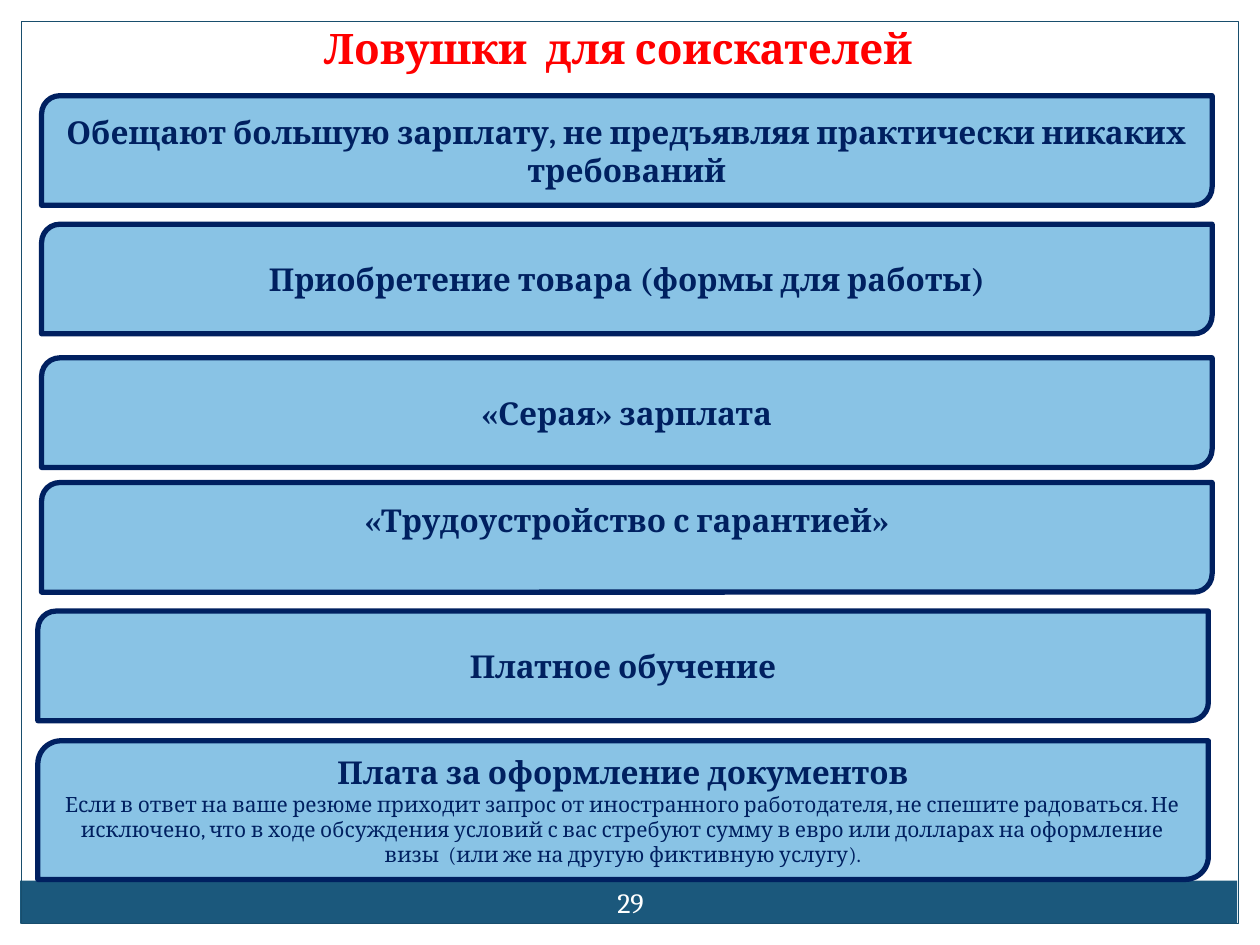
"""Builds the slide about traps for job seekers."""
from pptx import Presentation
from pptx.dml.color import RGBColor
from pptx.enum.shapes import MSO_SHAPE
from pptx.enum.text import MSO_ANCHOR, PP_ALIGN
from pptx.util import Inches, Pt

RECTANGLE = MSO_SHAPE.RECTANGLE
CARD = MSO_SHAPE.ROUND_2_DIAG_RECTANGLE
MIDDLE = MSO_ANCHOR.MIDDLE
LEFT, CENTER = PP_ALIGN.LEFT, PP_ALIGN.CENTER

WIDTH, HEIGHT = Inches(10), Inches(7.5)
COLUMNS, ROWS = 100, 75
NAVY, SKY, TEAL, EDGE = "002060", "89C3E5", "1B587C", "184E6D"
RED, WHITE = "FF0000", "FFFFFF"

CARD_WIDTH, CARD_HEIGHT = 92.9, 8.7
CARDS = [
    (3.3, 7.6, "Обещают большую зарплату, не предъявляя практически никаких требований", {}),
    (3.3, 17.8, "Приобретение товара (формы для работы)", {}),
    (3.3, 28.4, "«Серая» зарплата", {}),
    (3.3, 38.3, "«Трудоустройство с гарантией»", {"margin_bottom": Inches(0.32)}),
    (3, 48.5, "Платное обучение", {}),
]
DETAIL = (
    "Если в ответ на ваше резюме приходит запрос от иностранного работодателя, "
    "не спешите радоваться. Не исключено, что в ходе обсуждения условий с вас "
    "стребуют сумму в евро или долларах на оформление визы  (или же на другую "
    "фиктивную услугу)."
)


def color(value):
    """Turn a hex string into a colour."""
    return RGBColor.from_string(value)


def apply(target, values):
    """Set each attribute named in a dict of format values."""
    for name, value in values.items():
        setattr(target, name, value)


class Deck:
    """Holds the style and the current slide."""

    font = "Cambria"

    def __init__(self):
        """Start a deck with one title-only page."""
        self.deck = Presentation()
        apply(self.deck, {"slide_width": WIDTH, "slide_height": HEIGHT})
        self.page = self.deck.slides.add_slide(self.deck.slide_layouts[5])

    def place(self, column, row, columns, rows):
        """Convert grid units into left, top, width and height."""
        across, down = WIDTH / COLUMNS, HEIGHT / ROWS
        return (round(column * across), round(row * down),
                round(columns * across), round(rows * down))

    def fill_text(self, box, lines, align=CENTER, **frame_format):
        """Fill a box with (text, size, bold, colour) lines."""
        frame = box.text_frame
        apply(frame, {"word_wrap": True, "vertical_anchor": MIDDLE} | frame_format)
        for index, (text, size, bold, ink) in enumerate(lines):
            para = frame.add_paragraph() if index else frame.paragraphs[0]
            para.alignment = align
            span = para.add_run()
            span.text = text
            apply(span.font, {"name": self.font, "size": Pt(size), "bold": bold})
            span.font.color.rgb = color(ink)

    def title(self, area, text):
        """Move and format the title placeholder."""
        box = self.page.shapes.title
        names = ("left", "top", "width", "height")
        apply(box, dict(zip(names, self.place(*area))))
        self.fill_text(box, [(text, 24, True, RED)], LEFT, word_wrap=False)

    def shape(self, kind, area, fill=None, line=None, weight=0.75):
        """Add a flat preset shape."""
        box = self.page.shapes.add_shape(kind, *self.place(*area))
        box.shadow.inherit = False
        if fill:
            box.fill.solid()
            box.fill.fore_color.rgb = color(fill)
        else:
            box.fill.background()
        if line:
            box.line.color.rgb = color(line)
            box.line.width = Pt(weight)
        else:
            box.line.fill.background()
        return box

    def card(self, area, heading, detail=None, **frame_format):
        """Add a card with a heading and an optional detail line."""
        lines = [(heading, 18, True, NAVY)]
        if detail:
            lines.append((detail, 12, False, NAVY))
        self.fill_text(self.shape(CARD, area, SKY, NAVY, 3), lines, **frame_format)

    def number(self, area, text):
        """Add the page number."""
        box = self.page.shapes.add_textbox(*self.place(*area))
        margins = dict.fromkeys(("margin_left", "margin_right", "margin_top",
                                 "margin_bottom"), Inches(0.05))
        self.fill_text(box, [(text, 16, False, WHITE)], **margins)


def main():
    """Build and save the deck."""
    deck = Deck()
    deck.shape(RECTANGLE, (1.6, 69.9, 96.6, 3.4), fill=TEAL)
    deck.shape(RECTANGLE, (1.7, 1.7, 96.6, 71.6), line=EDGE)
    deck.title((24.7, 1.3, 50.5, 5), "Ловушки  для соискателей")
    for column, row, heading, frame_format in CARDS:
        deck.card((column, row, CARD_WIDTH, CARD_HEIGHT), heading, **frame_format)
    deck.card((3, 58.8, CARD_WIDTH, 11), "Плата за оформление документов", DETAIL)
    deck.number((46.7, 69.2, 6.7, 4.8), "29")
    deck.deck.save("out.pptx")


if __name__ == "__main__":
    main()
